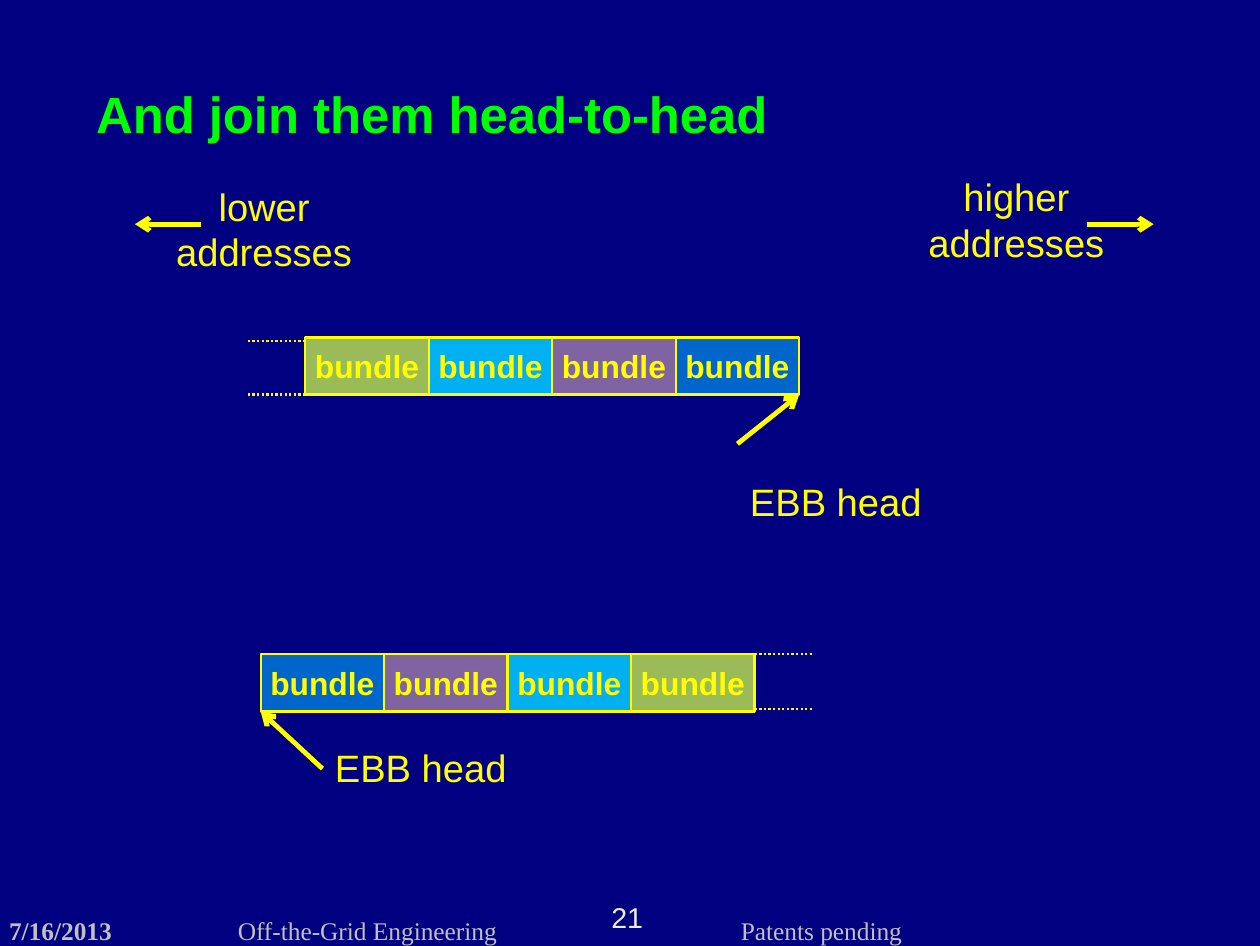
"""Build the slide on joining two bundle chains head-to-head."""
from dataclasses import dataclass

from lxml.etree import SubElement
from pptx import Presentation
from pptx.dml.color import RGBColor
from pptx.enum.dml import MSO_LINE_DASH_STYLE as Dash
from pptx.enum.shapes import MSO_CONNECTOR as Connector, MSO_SHAPE as Shape
from pptx.enum.text import MSO_ANCHOR as Anchor, PP_ALIGN as Align
from pptx.oxml.ns import qn
from pptx.util import Inches, Pt


@dataclass(frozen=True)
class Theme:
    sans: str = "Arial"
    serif: str = "Times New Roman"
    background: str = "000080"
    title: str = "00FF00"
    accent: str = "FFFF00"
    footer: str = "C0C0C0"
    number: str = "EEECE1"
    title_size: int = 32
    label_size: int = 24
    bundle_size: int = 20
    number_size: int = 18
    footer_size: int = 16
    outline: float = 1.45
    arrow: int = 3


THEME = Theme()
TITLE = "And join them head-to-head"
HEAD_LABEL = "EBB head"
BUNDLE_LABEL = "bundle"
BUNDLE_FILLS = ["0066CC", "8064A2", "00B0F0", "9BBB59"]
BUNDLE_WIDTH, BUNDLE_HEIGHT = 1.08, 0.5
RAIL_LENGTH, POINTER_REACH = 0.5, 0.54

# (head x, growth direction, top, rail heights, pointer drop, label position)
CHAINS = [
    (6.99, -1, 2.95, (2.98, 3.45), 0.43, (6.45, 4.13)),
    (2.28, 1, 5.72, (5.72, 6.2), 0.5, (2.82, 6.46)),
]
DIRECTIONS = [
    ("lower\naddresses", (1.43, 1.55), (1.76, 1.18)),
    ("higher\naddresses", (8.01, 1.47), (9.51, 10.09)),
]
DIRECTION_Y = 1.96
FOOTERS = [
    ("7/16/2013", 0.08, 1, True),
    ("Off-the-Grid Engineering", 2.08, 2.44, False),
    ("Patents pending", 6.48, 1.43, False),
]
FOOTER_TOP = 8
NUMBER = "21"


def write(frame, text, size, color, font=THEME.sans, bold=False,
          align=Align.CENTER, inset=0.0, anchor=Anchor.TOP):
    frame.text = text
    frame.word_wrap = False
    frame.vertical_anchor = anchor
    frame.margin_left = frame.margin_right = Inches(inset)
    frame.margin_top = frame.margin_bottom = Inches(min(inset, 0.05))
    for paragraph in frame.paragraphs:
        paragraph.alignment = align
        for run in paragraph.runs:
            run.font.name, run.font.size, run.font.bold = font, Pt(size), bold
            run.font.color.rgb = RGBColor.from_string(color)


def add_label(slide, text, box, size, color, **style):
    label = slide.shapes.add_textbox(*map(Inches, box))
    write(label.text_frame, text, size, color, **style)


def add_line(slide, start, end, width, dotted=False, arrow=False):
    line = slide.shapes.add_connector(Connector.STRAIGHT, *map(Inches, start + end))
    line.line.color.rgb = RGBColor.from_string(THEME.accent)
    line.line.width = Pt(width)
    if dotted:
        line.line.dash_style = Dash.ROUND_DOT
    if arrow:
        SubElement(line.line._get_or_add_ln(), qn("a:tailEnd"), type="arrow")
    SubElement(line._element.spPr, qn("a:effectLst"))


def add_bundle(slide, left, top, fill):
    bundle = slide.shapes.add_shape(
        Shape.RECTANGLE, *map(Inches, (left, top, BUNDLE_WIDTH, BUNDLE_HEIGHT)))
    bundle.shadow.inherit = False
    bundle.fill.solid()
    bundle.fill.fore_color.rgb = RGBColor.from_string(fill)
    bundle.line.color.rgb = RGBColor.from_string(THEME.accent)
    bundle.line.width = Pt(THEME.outline)
    write(bundle.text_frame, BUNDLE_LABEL, THEME.bundle_size, THEME.accent,
          bold=True, inset=0.01, anchor=Anchor.MIDDLE)


def add_chain(slide, head, direction, top, rails, drop, label_at):
    chain_end = head + direction * BUNDLE_WIDTH * len(BUNDLE_FILLS)
    for y in rails:
        add_line(slide, (chain_end, y), (chain_end + direction * RAIL_LENGTH, y),
                 THEME.outline, dotted=True)
    for index, fill in enumerate(BUNDLE_FILLS):
        near = head + direction * BUNDLE_WIDTH * index
        add_bundle(slide, min(near, near + direction * BUNDLE_WIDTH), top, fill)
    bottom = top + BUNDLE_HEIGHT
    add_line(slide, (head + direction * POINTER_REACH, bottom + drop),
             (head, bottom), THEME.arrow, arrow=True)
    add_label(slide, HEAD_LABEL, label_at + (1.72, 0.5), THEME.label_size,
              THEME.accent, inset=0.1)


def main():
    deck = Presentation()
    deck.slide_width, deck.slide_height = Inches(11.02), Inches(8.27)
    slide = deck.slides.add_slide(deck.slide_layouts.get_by_name("Title Only"))
    slide.background.fill.solid()
    slide.background.fill.fore_color.rgb = RGBColor.from_string(THEME.background)

    title = slide.shapes.title
    title.left, title.top, title.width, title.height = map(
        Inches, (0.84, 0.72, 5.93, 0.52))
    write(title.text_frame, TITLE, THEME.title_size, THEME.title,
          bold=True, align=Align.LEFT)

    for text, left, width, bold in FOOTERS:
        add_label(slide, text, (left, FOOTER_TOP, width, 0.25), THEME.footer_size,
                  THEME.footer, font=THEME.serif, bold=bold, align=Align.LEFT)
    add_label(slide, NUMBER, (5.33, 7.87, 0.31, 0.29), THEME.number_size, THEME.number)

    for chain in CHAINS:
        add_chain(slide, *chain)
    for text, label_at, (start, end) in DIRECTIONS:
        add_line(slide, (start, DIRECTION_Y), (end, DIRECTION_Y), THEME.arrow, arrow=True)
        add_label(slide, text, label_at + (1.76, 0.91), THEME.label_size,
                  THEME.accent, inset=0.1)
    deck.save("out.pptx")


if __name__ == "__main__":
    main()
